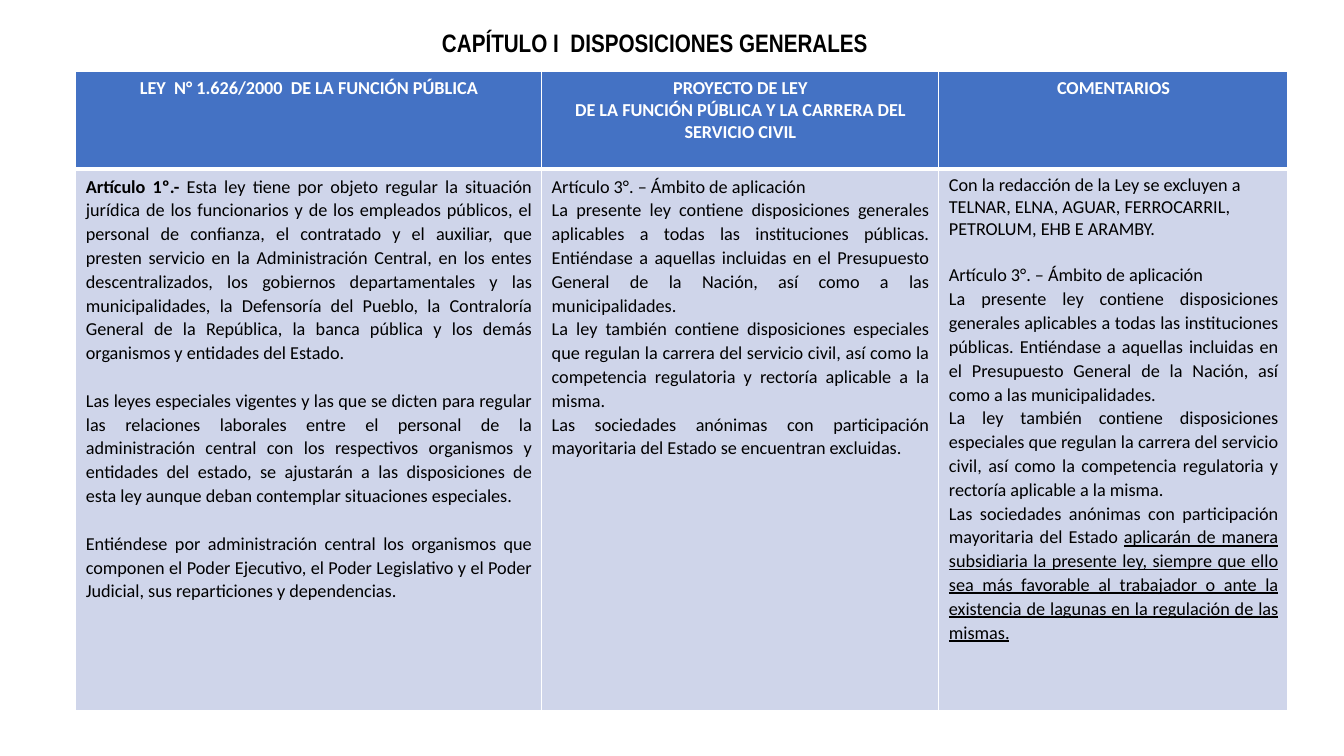
import pptx
import pptx.dml.color
import pptx.enum.text
import pptx.oxml
import pptx.oxml.ns
import pptx.util

Cm = pptx.util.Cm
Pt = pptx.util.Pt
ALIGN = pptx.enum.text.PP_ALIGN
ANCHOR = pptx.enum.text.MSO_ANCHOR

BLACK, WHITE = "000000", "FFFFFF"
HEADER_FILL, BODY_FILL = "4472C4", "CFD5EA"


def color(value):
    return pptx.dml.color.RGBColor.from_string(value)


def set_attributes(target, values):
    for name, value in values.items():
        setattr(target, name, value)


def paragraph_style(alignment, **extra):
    return {"alignment": alignment, "space_before": Pt(0), **extra}


CENTERED = paragraph_style(ALIGN.CENTER)
PLAIN = paragraph_style(ALIGN.LEFT)
JUSTIFIED = paragraph_style(ALIGN.JUSTIFY, line_spacing=Pt(17))
SPACED = {**JUSTIFIED, "space_before": Pt(17)}

# Wording shared by the bill and the comments
SCOPE_HEADING = "Artículo 3°. – Ámbito de aplicación"
SCOPE_PARAGRAPHS = [
    "La presente ley contiene disposiciones generales aplicables a todas las "
    "instituciones públicas. Entiéndase a aquellas incluidas en el Presupuesto "
    "General de la Nación, así como a las municipalidades.",
    "La ley también contiene disposiciones especiales que regulan la carrera del "
    "servicio civil, así como la competencia regulatoria y rectoría aplicable a la "
    "misma.",
]
COMPANIES = "Las sociedades anónimas con participación mayoritaria del Estado "
SCOPE = [(JUSTIFIED, [(text, {})]) for text in SCOPE_PARAGRAPHS]

# Each cell is a list of (paragraph style, runs); each run is (text, font values)
HEADERS = [
    ["LEY  N° 1.626/2000  DE LA FUNCIÓN PÚBLICA"],
    ["PROYECTO DE LEY",
     "DE LA FUNCIÓN PÚBLICA Y LA CARRERA DEL SERVICIO CIVIL"],
    ["COMENTARIOS"],
]
HEADER_CELLS = [[(CENTERED, [(line, {"bold": True})]) for line in lines]
                for lines in HEADERS]

CURRENT_LAW = [
    (JUSTIFIED, [
        ("Artículo 1º.-", {"bold": True}),
        (" Esta ley tiene por objeto regular la situación jurídica de los "
         "funcionarios y de los empleados públicos, el personal de confianza, el "
         "contratado y el auxiliar, que presten servicio en la Administración "
         "Central, en los entes descentralizados, los gobiernos departamentales y "
         "las municipalidades, la Defensoría del Pueblo, la Contraloría General de "
         "la República, la banca pública y los demás organismos y entidades del "
         "Estado.", {})]),
    (SPACED, [
        ("Las leyes especiales vigentes y las que se dicten para regular las "
         "relaciones laborales entre el personal de la administración central con "
         "los respectivos organismos y entidades del estado, se ajustarán a las "
         "disposiciones de esta ley aunque deban contemplar situaciones "
         "especiales.", {})]),
    (SPACED, [
        ("Entiéndese por administración central los organismos que componen el "
         "Poder Ejecutivo, el Poder Legislativo y el Poder Judicial, sus "
         "reparticiones y dependencias.", {})]),
]
BILL = [
    (JUSTIFIED, [(SCOPE_HEADING, {})]),
    *SCOPE,
    (JUSTIFIED, [(COMPANIES + "se encuentran excluidas.", {})]),
]
COMMENTS = [
    (PLAIN, [
        ("Con la redacción de la Ley se excluyen a TELNAR, ELNA, AGUAR, "
         "FERROCARRIL, PETROLUM, EHB E ARAMBY.", {})]),
    ({**JUSTIFIED, "space_before": Pt(16)}, [(SCOPE_HEADING, {})]),
    *SCOPE,
    (JUSTIFIED, [
        (COMPANIES, {}),
        ("aplicarán de manera subsidiaria la presente ley, siempre que ello sea "
         "más favorable al trabajador o ante la existencia de lagunas en la "
         "regulación de las mismas.", {"underline": True})]),
]


class SlideBuilder:
    def __init__(self, slide):
        self.slide = slide
        self.table_font = {"name": "Calibri", "size": Pt(13), "bold": False}
        self.title_font = {"name": "Arial Narrow", "size": Pt(18), "bold": True}

    def fill_text(self, text_frame, paragraphs, font, font_color):
        for index, (style, runs) in enumerate(paragraphs):
            paragraph = (text_frame.add_paragraph() if index
                         else text_frame.paragraphs[0])
            set_attributes(paragraph, style)
            for text, changes in runs:
                run = paragraph.add_run()
                run.text = text
                set_attributes(run.font, {**font, **changes})
                run.font.color.rgb = color(font_color)

    def title(self, text, left, top, width, height):
        shape = self.slide.shapes.add_textbox(Cm(left), Cm(top), Cm(width), Cm(height))
        set_attributes(shape.text_frame,
                       {"word_wrap": True, "vertical_anchor": ANCHOR.MIDDLE})
        style = {**CENTERED, "line_spacing": 0.9}
        self.fill_text(shape.text_frame, [(style, [(text, {})])], self.title_font, BLACK)

    def borders(self, cell, widths):
        properties = cell._tc.get_or_add_tcPr()
        for index, (side, width) in enumerate(widths.items()):
            line = pptx.oxml.parse_xml(
                f'<a:ln{side} {pptx.oxml.ns.nsdecls("a")} w="{Pt(width)}">'
                f'<a:solidFill><a:srgbClr val="{WHITE}"/></a:solidFill></a:ln{side}>')
            properties.insert(index, line)

    def table(self, rows, left, top, widths, heights):
        table = self.slide.shapes.add_table(
            len(rows), len(widths), Cm(left), Cm(top),
            Cm(sum(widths)), Cm(sum(heights))).table
        for column, width in zip(table.columns, widths):
            column.width = Cm(width)
        for row, height in zip(table.rows, heights):
            row.height = Cm(height)
        for row_index, contents in enumerate(rows):
            is_header = row_index == 0
            for column_index, paragraphs in enumerate(contents):
                cell = table.cell(row_index, column_index)
                cell.fill.solid()
                cell.fill.fore_color.rgb = color(HEADER_FILL if is_header else BODY_FILL)
                # The rule under the header is thicker than the others
                self.borders(cell, {"L": 1, "R": 1, "T": 1 if is_header else 3,
                                    "B": 3 if is_header else 1})
                self.fill_text(cell.text_frame, paragraphs, self.table_font,
                               WHITE if is_header else BLACK)


def main():
    presentation = pptx.Presentation()
    set_attributes(presentation, {"slide_width": Cm(33.87), "slide_height": Cm(19.05)})
    builder = SlideBuilder(presentation.slides.add_slide(presentation.slide_layouts[6]))

    # Chapter title
    builder.title("CAPÍTULO I  DISPOSICIONES GENERALES", 1.9, 0, 29.21, 2.26)

    # Comparison of the law, the bill and the comments
    builder.table([HEADER_CELLS, [CURRENT_LAW, BILL, COMMENTS]],
                  left=1.91, top=1.81, widths=[11.74, 10.01, 8.8],
                  heights=[2.45, 13.64])

    presentation.save("out.pptx")


if __name__ == "__main__":
    main()
